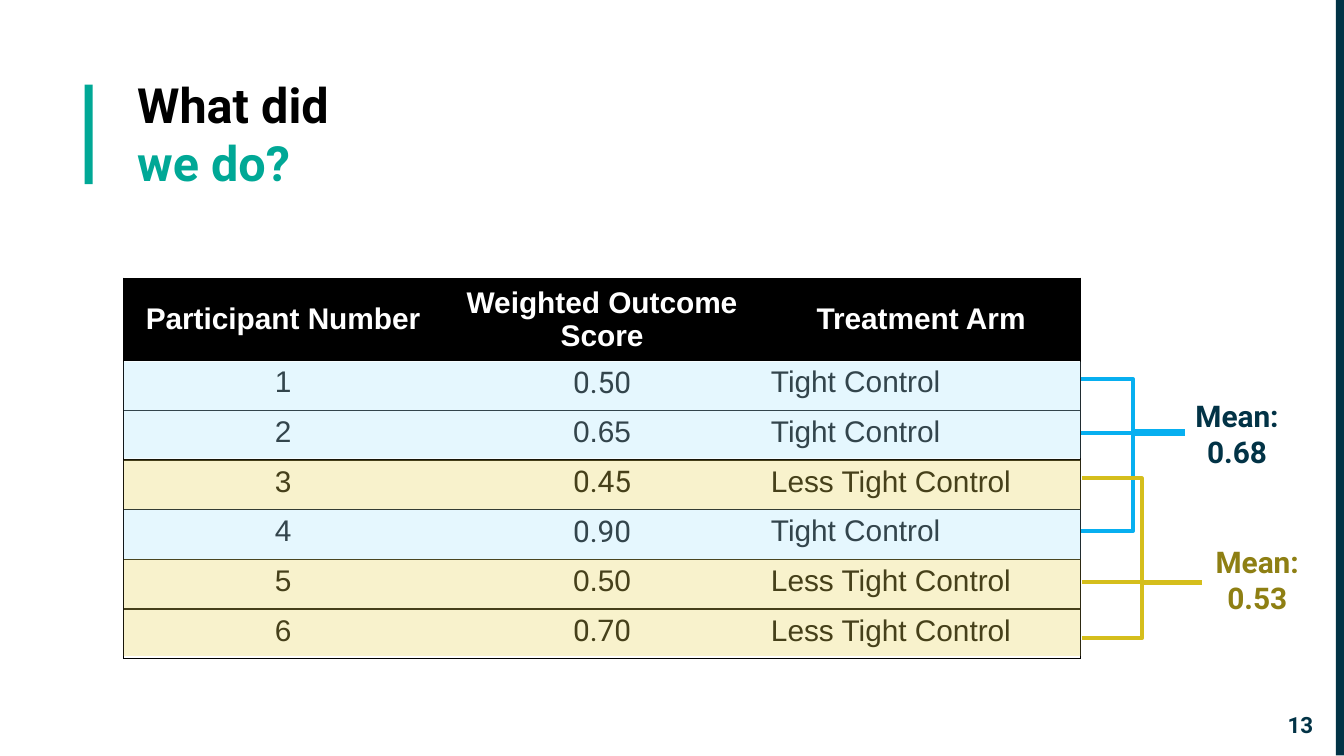
"""Build the slide that groups outcome scores by treatment arm."""
from lxml.etree import SubElement
from pptx import Presentation
from pptx.dml.color import RGBColor
from pptx.enum.shapes import MSO_CONNECTOR, MSO_SHAPE
from pptx.enum.text import MSO_ANCHOR, MSO_AUTO_SIZE, PP_ALIGN
from pptx.oxml import parse_xml
from pptx.oxml.ns import nsdecls, qn
from pptx.util import Inches, Pt


class Theme:
    black = "000000"
    white = "FFFFFF"
    teal = "00A896"
    navy = "023346"
    sky = "07AFF0"
    gold = "D5BE1C"
    olive = "8E7F13"
    pale_sky = "AAE5FD"
    pale_gold = "E9D758"
    head = 26
    body = 16
    small = 12
    main = "Roboto"
    grid = "Arial"


def write(para, text, size=Theme.body, color=Theme.black, font=Theme.main,
          bold=True, align=PP_ALIGN.CENTER):
    para.alignment = align
    run = para.add_run()
    run.text = text
    run.font.size = Pt(size)
    run.font.name = font
    run.font.bold = bold
    run.font.color.rgb = RGBColor.from_string(color)


def block(box, color, alpha=None):
    shape = slide.shapes.add_shape(MSO_SHAPE.RECTANGLE, *map(Inches, box))
    shape.shadow.inherit = False
    shape.line.fill.background()
    shape.fill.solid()
    shape.fill.fore_color.rgb = RGBColor.from_string(color)
    if alpha:
        tint = shape.fill._xPr.find(f".//{qn('a:srgbClr')}")
        SubElement(tint, qn("a:alpha"), val=str(alpha * 1000))


deck = Presentation()
deck.slide_width = Inches(10)
deck.slide_height = Inches(10) * 9 // 16
slide = deck.slides.add_slide(deck.slide_layouts[5])

block((0.63, 0.63, 0.06, 0.74), Theme.teal)
block((9.94, 0, 0.06, 5.62), Theme.navy)

title = slide.shapes.title
title.left, title.top, title.width, title.height = map(Inches, (0.92, 0.46, 3.53, 0.94))
frame = title.text_frame
frame.auto_size = MSO_AUTO_SIZE.NONE
frame.vertical_anchor = MSO_ANCHOR.TOP
frame.margin_left = frame.margin_right = frame.margin_top = frame.margin_bottom = Inches(0.1)
para = frame.paragraphs[0]
write(para, "What did", size=Theme.head, align=PP_ALIGN.LEFT)
para.add_line_break()
write(para, "we do?", size=Theme.head, color=Theme.teal, align=PP_ALIGN.LEFT)

page = slide.shapes.add_textbox(*map(Inches, (9.27, 5.19, 0.6, 0.43))).text_frame
page.word_wrap = True
page.margin_top = page.margin_bottom = page.margin_left = page.margin_right = Inches(0.1)
write(page.paragraphs[0], "13", size=Theme.small, color=Theme.navy, align=PP_ALIGN.RIGHT)

rows = [
    ("Participant Number", "Weighted Outcome Score", "Treatment Arm"),
    ("1", "0.50", "Tight Control"),
    ("2", "0.65", "Tight Control"),
    ("3", "0.45", "Less Tight Control"),
    ("4", "0.90", "Tight Control"),
    ("5", "0.50", "Less Tight Control"),
    ("6", "0.70", "Less Tight Control"),
]
roboto_rows = {1, 3, 4, 6}
table = slide.shapes.add_table(
    len(rows), 3, *map(Inches, (0.92, 2.07, 7.12, 2.79))).table
table._tbl.tblPr.find(qn("a:tableStyleId")).text = "{2D5ABB26-0587-4C30-8999-92F81FD0307C}"
for col in table.columns:
    col.width = Inches(7.12 / 3)
for r, row in enumerate(rows):
    table.rows[r].height = Inches(0.37 if r else 0.57)
    for c, text in enumerate(row):
        cell = table.cell(r, c)
        cell.margin_left = cell.margin_right = Inches(0.07)
        cell.margin_top = cell.margin_bottom = Inches(0.04)
        if r:
            cell.fill.background()
        else:
            cell.fill.solid()
            cell.fill.fore_color.rgb = RGBColor.from_string(Theme.black)
            cell.vertical_anchor = MSO_ANCHOR.MIDDLE
        write(cell.text_frame.paragraphs[0], text, bold=r == 0,
              color=Theme.black if r else Theme.white,
              font=Theme.main if c == 1 and r in roboto_rows else Theme.grid,
              align=PP_ALIGN.LEFT if r and c == 2 else PP_ALIGN.CENTER)
        sides = ["L"] * (c == 0) + ["R"] * (c == 2) + ["T", "B"]
        for i, side in enumerate(sides):
            cell._tc.get_or_add_tcPr().insert(i, parse_xml(
                f'<a:ln{side} {nsdecls("a")} w="9525"><a:solidFill>'
                f'<a:srgbClr val="{Theme.black}"/></a:solidFill></a:ln{side}>'))

for top, height, color in [
    (2.69, 0.72, Theme.pale_sky),
    (3.79, 0.37, Theme.pale_sky),
    (4.16, 0.72, Theme.pale_gold),
    (3.42, 0.37, Theme.pale_gold),
]:
    block((0.92, top, 7.12, height), color, alpha=30)

elbow, line = MSO_CONNECTOR.ELBOW, MSO_CONNECTOR.STRAIGHT
links = [
    (Theme.sky, [(elbow, 8.04, 3.95, 8.82, 3.23),
                 (elbow, 8.04, 2.82, 8.82, 3.21),
                 (line, 8.04, 3.22, 8.44, 3.22)]),
    (Theme.gold, [(elbow, 8.05, 3.56, 8.94, 4.33),
                  (elbow, 8.05, 4.75, 8.94, 4.34),
                  (line, 8.05, 4.33, 8.5, 4.33)]),
]
for color, parts in links:
    group = slide.shapes.add_group_shape()
    for kind, *ends in parts:
        link = group.shapes.add_connector(kind, *map(Inches, ends))
        link.line.width = Pt(2.25)
        link.line.color.rgb = RGBColor.from_string(color)
        SubElement(link._element.spPr, qn("a:effectLst"))

for left, top, score, color in [
    (8.49, 2.99, "0.68", Theme.navy),
    (8.64, 4.08, "0.53", Theme.olive),
]:
    mean = slide.shapes.add_textbox(*map(Inches, (left, top, 1.43, 0.47))).text_frame
    mean.word_wrap = True
    mean.vertical_anchor = MSO_ANCHOR.MIDDLE
    write(mean.paragraphs[0], "Mean:", color=color)
    write(mean.add_paragraph(), score, color=color)

deck.save("out.pptx")
